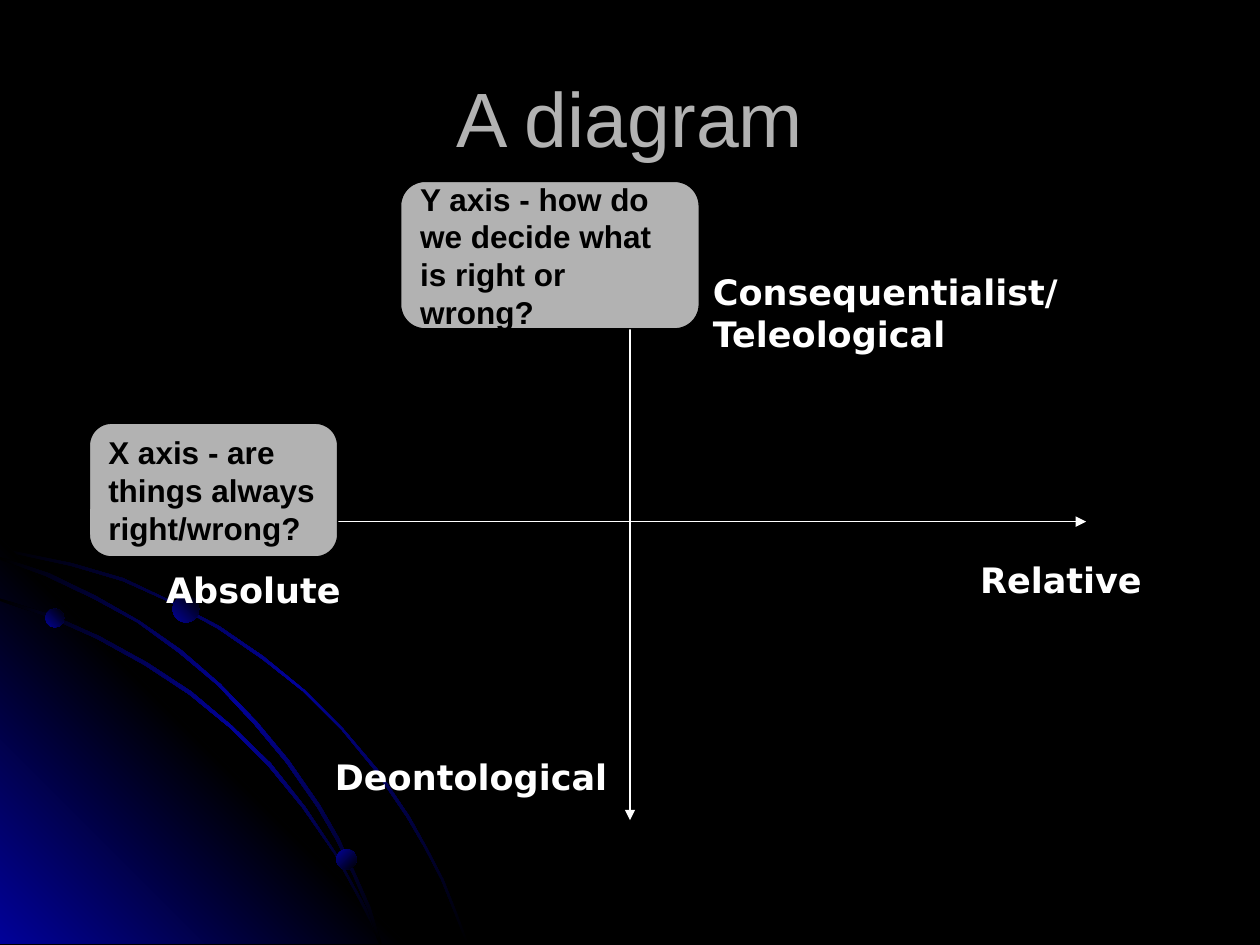
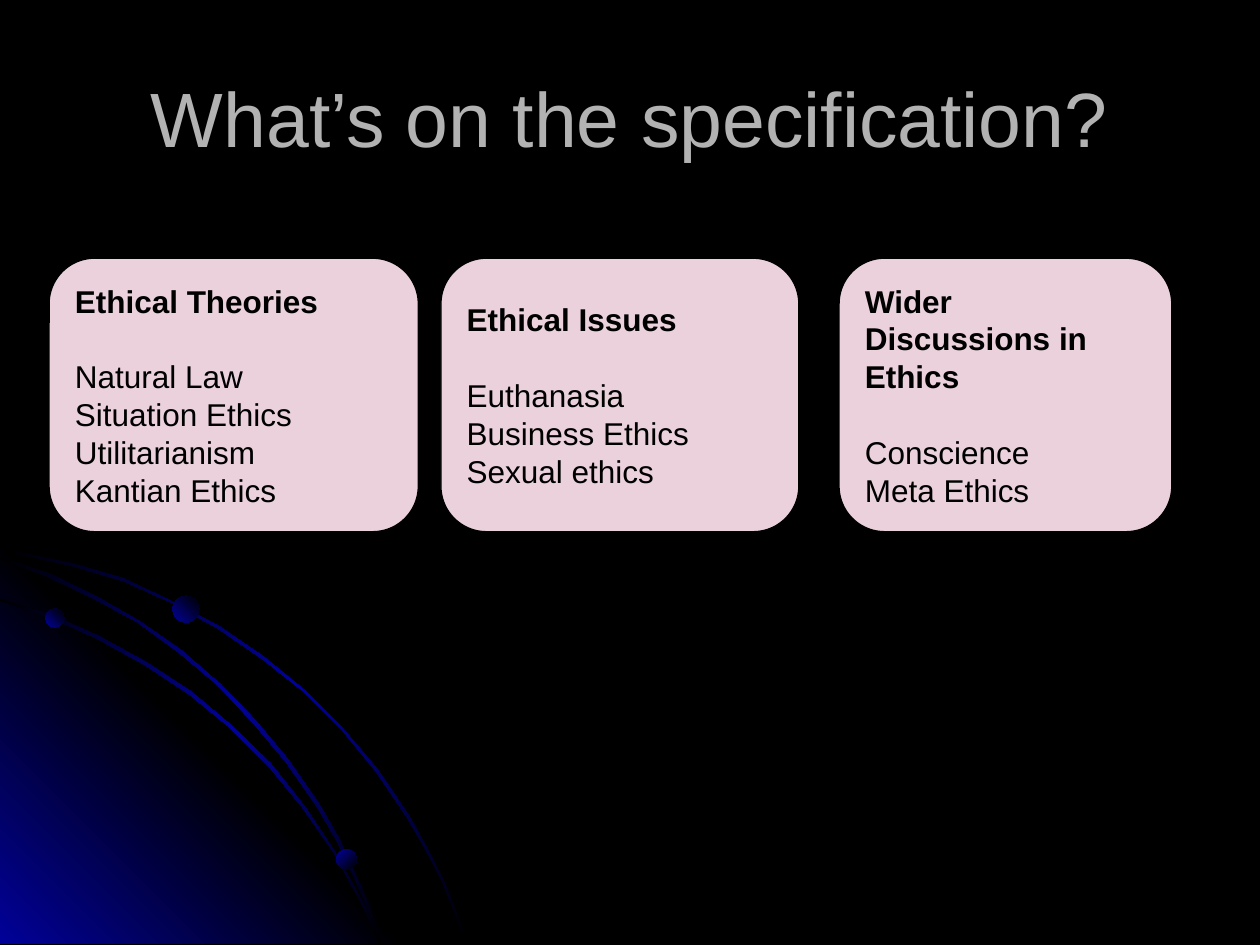
from lxml import etree
from pptx import Presentation
from pptx.dml.color import RGBColor
from pptx.enum.shapes import MSO_CONNECTOR, MSO_SHAPE
from pptx.enum.text import MSO_ANCHOR, PP_ALIGN
from pptx.oxml.ns import nsdecls, qn
from pptx.util import Inches, Pt

BLACK = RGBColor(0x00, 0x00, 0x00)
WHITE = RGBColor(0xFF, 0xFF, 0xFF)
GREY = RGBColor(0xB2, 0xB2, 0xB2)
PINK = RGBColor(0xEA, 0xD1, 0xDC)
BLUE = RGBColor(0x01, 0x01, 0x99)

BODY_FONT = "Arial"
LABEL_FONT = "DejaVu Sans"
STRAIGHT = MSO_CONNECTOR.STRAIGHT
ROUNDED = MSO_SHAPE.ROUNDED_RECTANGLE
OVAL = MSO_SHAPE.OVAL
MIDDLE = MSO_ANCHOR.MIDDLE
TOP = MSO_ANCHOR.TOP
LEFT = PP_ALIGN.LEFT
CENTER = PP_ALIGN.CENTER

OUTER_ARC = [
    (0.57, 4.47), (0.28, 4.41), (0, 4.35), (0, 4.37), (0.28, 4.43), (0.56, 4.49),
    (0.97, 4.61), (1.35, 4.78), (1.73, 4.99), (2.08, 5.23), (2.41, 5.49), (2.71, 5.79),
    (2.98, 6.12), (3.23, 6.49), (3.37, 6.73), (3.5, 6.98), (3.6, 7.23), (3.7, 7.49),
    (3.72, 7.49), (3.62, 7.23), (3.52, 6.98), (3.39, 6.73), (3.25, 6.48), (3, 6.11),
    (2.72, 5.78), (2.42, 5.48), (2.09, 5.21), (1.74, 4.97), (1.36, 4.77), (0.98, 4.59),
]
CORNER_GLOW = [(3.22, 7.49), (0, 7.49), (0, 4.27)]
INNER_ARC = [
    (2.85, 7.14), (2.94, 7.32), (3.01, 7.49), (3.03, 7.49), (2.96, 7.3), (2.86, 7.12),
    (2.66, 6.76), (2.42, 6.4), (2.15, 6.06), (1.84, 5.76), (1.52, 5.49), (1.17, 5.26),
    (0.79, 5.05), (0.41, 4.88), (0, 4.75), (0, 4.77), (0.39, 4.9), (0.77, 5.07),
    (1.15, 5.28), (1.5, 5.51), (1.83, 5.78), (2.13, 6.08), (2.4, 6.41), (2.65, 6.77),
]
MIDDLE_ARC = [
    (0, 4.42), (0, 4.44), (0.36, 4.57), (0.74, 4.75), (1.09, 4.94), (1.42, 5.18),
    (1.73, 5.44), (2.02, 5.75), (2.27, 6.05), (2.52, 6.41), (2.67, 6.67), (2.8, 6.94),
    (2.92, 7.22), (3.01, 7.49), (3.03, 7.49), (2.94, 7.2), (2.82, 6.93), (2.69, 6.65),
    (2.54, 6.39), (2.29, 6.03), (2.04, 5.73), (1.75, 5.43), (1.44, 5.16), (1.11, 4.93),
    (0.76, 4.73), (0.39, 4.55),
]
ARC_COLORS = (BLACK, BLUE, BLACK)
GLOW_COLORS = (BLUE, BLACK, BLUE)
BEAD_COLORS = (BLUE, BLACK)
BACKDROP_BANDS = [
    (OUTER_ARC, ARC_COLORS, 45),
    (CORNER_GLOW, GLOW_COLORS, 315),
    (INNER_ARC, ARC_COLORS, 45),
    (MIDDLE_ARC, ARC_COLORS, 45),
]
# left, top, diameter, gradient angle
BEADS = [(0.36, 4.83, 0.15, 315), (2.67, 6.74, 0.16, 45), (1.37, 4.73, 0.21, 315)]


class Deck:
    """Holds the presentation, its style and the slide being filled."""

    def __init__(self):
        self.prs = Presentation()
        self.prs.slide_width = Inches(10)
        self.prs.slide_height = Inches(7.5)
        self.slide = None

    def new_slide(self, title):
        self.slide = self.prs.slides.add_slide(self.prs.slide_layouts[6])
        background = self.slide.background.fill
        background.solid()
        background.fore_color.rgb = BLACK
        for points, colors, angle in BACKDROP_BANDS:
            self.band(points, colors, angle)
        for left, top, diameter, angle in BEADS:
            bead = self.slide.shapes.add_shape(
                OVAL, Inches(left), Inches(top), Inches(diameter), Inches(diameter))
            self.paint_gradient(bead, BEAD_COLORS, angle)
        self.text(title, 0.5, 0.3, 9, 1.25, BODY_FONT, 44, GREY,
                  align=CENTER, anchor=MIDDLE)

    def band(self, points, colors, angle):
        corners = [(Inches(x), Inches(y)) for x, y in points]
        builder = self.slide.shapes.build_freeform(*corners[0])
        builder.add_line_segments(corners[1:], close=True)
        self.paint_gradient(builder.convert_to_shape(), colors, angle)

    def paint_gradient(self, shape, colors, angle):
        """Fill with evenly spaced colours; the angle runs clockwise in degrees."""
        step = 100000 // (len(colors) - 1)
        stops = "".join(
            f'<a:gs pos="{i * step}"><a:srgbClr val="{color}"/></a:gs>'
            for i, color in enumerate(colors))
        shape._element.spPr.append(etree.fromstring(
            f'<a:gradFill {nsdecls("a")} rotWithShape="1"><a:gsLst>{stops}</a:gsLst>'
            f'<a:lin ang="{angle * 60000}" scaled="1"/></a:gradFill>'))
        shape.shadow.inherit = False
        shape.line.fill.background()

    def text(self, content, left, top, width, height, font, size, color,
             bold=False, align=LEFT, anchor=TOP):
        box = self.slide.shapes.add_textbox(
            Inches(left), Inches(top), Inches(width), Inches(height))
        frame = box.text_frame
        frame.word_wrap = True
        frame.vertical_anchor = anchor
        paragraph = frame.paragraphs[0]
        paragraph.text = content
        paragraph.alignment = align
        self.style(paragraph, font, size, color, bold)

    def style(self, paragraph, font, size, color, bold):
        paragraph.font.name = font
        paragraph.font.size = Pt(size)
        paragraph.font.color.rgb = color
        paragraph.font.bold = bold

    def label(self, content, left, top, width, height=0.43):
        self.text(content, left, top, width, height, LABEL_FONT, 20, WHITE, bold=True)

    def arrow(self, x1, y1, x2, y2):
        axis = self.slide.shapes.add_connector(
            STRAIGHT, Inches(x1), Inches(y1), Inches(x2), Inches(y2))
        axis.line.color.rgb = WHITE
        axis.line.width = Pt(0.75)
        etree.SubElement(axis.line._get_or_add_ln(), qn("a:tailEnd"), type="triangle")
        etree.SubElement(axis._element.spPr, qn("a:effectLst"))

    def card(self, heading, left, top, width, height, color, items=()):
        """Rounded box with a bold heading and, below a gap, plain items."""
        box = self.slide.shapes.add_shape(
            ROUNDED, Inches(left), Inches(top), Inches(width), Inches(height))
        box.shadow.inherit = False
        box.fill.solid()
        box.fill.fore_color.rgb = color
        box.line.color.rgb = BLACK
        box.line.width = Pt(0.75)
        frame = box.text_frame
        frame.word_wrap = True
        frame.vertical_anchor = MIDDLE
        frame.margin_left = frame.margin_right = Inches(0.1)
        frame.margin_top = frame.margin_bottom = Inches(0.1)
        frame.text = "\n".join([heading, *items])
        for i, paragraph in enumerate(frame.paragraphs):
            paragraph.alignment = LEFT
            self.style(paragraph, BODY_FONT, 18, BLACK, bold=i == 0)
        if items:
            frame.paragraphs[0].space_after = Pt(21.6)


def add_diagram(deck):
    deck.new_slide("A diagram")
    deck.arrow(5, 2.1, 5, 6.51)
    deck.arrow(2.16, 4.14, 8.62, 4.14)
    deck.label("Absolute", 1.22, 4.46, 2.44)
    deck.label("Relative", 7.68, 4.38, 2.05)
    deck.label("Consequentialist/ Teleological", 5.56, 2.1, 2.96, 0.77)
    deck.label("Deontological", 2.56, 5.95, 2.44)
    deck.card("X axis - are things always right/wrong?", 0.71, 3.36, 1.97, 1.06, GREY)
    deck.card("Y axis - how do we decide what is right or wrong?",
              3.18, 1.44, 2.37, 1.17, GREY)


def add_specification(deck):
    deck.new_slide("What’s on the specification?")
    topics = [
        ("Ethical Theories", 0.39, 2.93,
         ["Natural Law", "Situation Ethics", "Utilitarianism", "Kantian Ethics"]),
        ("Ethical Issues", 3.5, 2.84,
         ["Euthanasia", "Business Ethics", "Sexual ethics"]),
        ("Wider Discussions in Ethics", 6.66, 2.64,
         ["Conscience", "Meta Ethics"]),
    ]
    for heading, left, width, items in topics:
        deck.card(heading, left, 2.05, width, 2.17, PINK, items)


def main():
    deck = Deck()
    add_diagram(deck)
    add_specification(deck)
    deck.prs.save("out.pptx")


if __name__ == "__main__":
    main()
